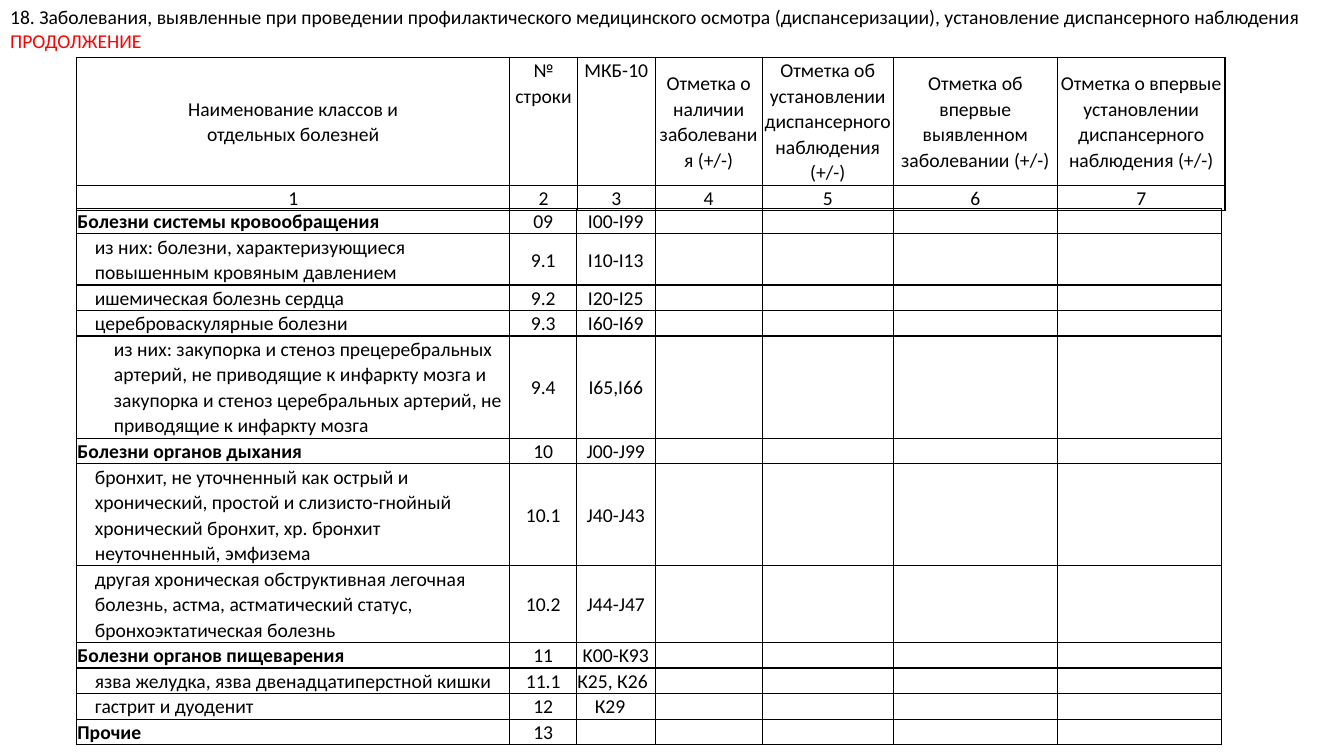
from lxml import etree
from pptx import Presentation
from pptx.dml.color import RGBColor
from pptx.enum.text import MSO_ANCHOR as Anchor, MSO_AUTO_SIZE as AutoSize, PP_ALIGN as Align
from pptx.oxml.ns import qn
from pptx.util import Cm, Pt

BLACK = "000000"
RED = "FF0000"
FONT_SIZE = 14
LINE_HEIGHT = 0.63
HEADER_HEIGHT = 3.17
TABLE_LEFT = 1.93
TITLE_HEIGHT = 1.45

HEADER_COLUMNS = [10.92, 1.7, 1.96, 2.7, 3.3, 4.14, 4.22]
DISEASE_COLUMNS = [10.92, 1.68, 1.98, 2.7, 3.3, 4.14, 4.14]

HEADINGS = [
    ("Наименование классов и\nотдельных болезней", Anchor.MIDDLE),
    ("№ строки", Anchor.TOP),
    ("МКБ-10", Anchor.TOP),
    ("Отметка о наличии заболевания (+/-)", Anchor.MIDDLE),
    ("Отметка об установлении диспансерного наблюдения (+/-)", Anchor.MIDDLE),
    ("Отметка об впервые выявленном заболевании (+/-)", Anchor.MIDDLE),
    ("Отметка о впервые установлении диспансерного наблюдения (+/-)", Anchor.MIDDLE),
]

CENTERED = {"align": Align.CENTER, "anchor": Anchor.MIDDLE}
LEFT = {"align": Align.LEFT}
CLASS = {"bold": True}
DISEASE = {"indent": 0.44}
SUBTYPE = {"indent": 0.92}

DISEASES = [
    ("Болезни системы кровообращения", CLASS, 1, "09", "I00-I99", CENTERED),
    ("из них: болезни, характеризующиеся повышенным кровяным давлением",
     DISEASE, 2, "9.1", "I10-I13", CENTERED),
    ("ишемическая болезнь сердца", DISEASE, 1, "9.2", "I20-I25", CENTERED),
    ("цереброваскулярные болезни", DISEASE, 1, "9.3", "I60-I69", CENTERED),
    ("из них: закупорка и стеноз прецеребральных артерий, не приводящие к инфаркту мозга "
     "и закупорка и стеноз церебральных артерий, не приводящие к инфаркту мозга",
     SUBTYPE, 4, "9.4", "I65,I66", CENTERED),
    ("Болезни органов дыхания", CLASS, 1, "10", "J00-J99", CENTERED),
    ("бронхит, не уточненный как острый и хронический, простой и слизисто-гнойный "
     "хронический бронхит, хр. бронхит неуточненный, эмфизема",
     DISEASE, 4, "10.1", "J40-J43", CENTERED),
    ("другая хроническая обструктивная легочная болезнь, астма, астматический статус, "
     "бронхоэктатическая болезнь", DISEASE, 3, "10.2", "J44-J47", CENTERED),
    ("Болезни органов пищеварения", CLASS, 1, "11", "K00-K93", CENTERED),
    ("язва желудка, язва двенадцатиперстной кишки", DISEASE, 1, "11.1", "К25, К26", LEFT),
    ("гастрит и дуоденит", DISEASE, 1, "12", "К29", DISEASE),
    ("Прочие", CLASS, 1, "13", "", CENTERED),
]


def color(value):
    return RGBColor.from_string(value)


def write(paragraph, text, fill=BLACK, bold=False, align=Align.LEFT, spacing=1.07, indent=0):
    paragraph.alignment = align
    paragraph.line_spacing = spacing
    if indent:
        paragraph._p.get_or_add_pPr().set("marL", str(Cm(indent)))
    if not text:
        etree.SubElement(paragraph._p, qn("a:endParaRPr"), sz=str(FONT_SIZE * 100))
        return
    run = paragraph.add_run()
    run.text = text
    run.font.name = "Calibri"
    run.font.size = Pt(FONT_SIZE)
    run.font.bold = bold
    run.font.color.rgb = color(fill)


def add_borders(cell):
    properties = cell._tc.get_or_add_tcPr()
    for position, side in enumerate(("lnL", "lnR", "lnT", "lnB")):
        line = etree.Element(qn(f"a:{side}"), w=str(Pt(1)))
        fill = etree.SubElement(line, qn("a:solidFill"))
        etree.SubElement(fill, qn("a:srgbClr"), val=BLACK)
        properties.insert(position, line)


def write_cell(cell, text, anchor=Anchor.TOP, **text_format):
    cell.margin_left = cell.margin_right = Cm(0.02)
    cell.margin_top = cell.margin_bottom = 0
    cell.vertical_anchor = anchor
    cell.fill.background()
    add_borders(cell)
    frame = cell.text_frame
    for index, line in enumerate(text.split("\n")):
        paragraph = frame.add_paragraph() if index else frame.paragraphs[0]
        write(paragraph, line, **text_format)


def add_grid(slide, left, top, columns, heights):
    table = slide.shapes.add_table(len(heights), len(columns), Cm(left), Cm(top),
                                   Cm(sum(columns)), Cm(sum(heights))).table
    table.first_row = table.horz_banding = False
    for column, width in zip(table.columns, columns):
        column.width = Cm(width)
    for row, height in zip(table.rows, heights):
        row.height = Cm(height)
    return table


def add_title(slide, left, top, width, height):
    title = slide.shapes.title
    title.left, title.top, title.width, title.height = Cm(left), Cm(top), Cm(width), Cm(height)
    frame = title.text_frame
    frame.word_wrap = True
    frame.auto_size = AutoSize.NONE
    frame.vertical_anchor = Anchor.TOP
    paragraph = frame.paragraphs[0]
    write(paragraph, "18. Заболевания, выявленные при проведении профилактического медицинского "
                     "осмотра (диспансеризации), установление диспансерного наблюдения ", spacing=1.0)
    write(paragraph, "ПРОДОЛЖЕНИЕ", fill=RED, spacing=1.0)


def add_header_table(slide, left, top):
    table = add_grid(slide, left, top, HEADER_COLUMNS, [HEADER_HEIGHT, LINE_HEIGHT])
    for index, (heading, anchor) in enumerate(HEADINGS):
        write_cell(table.cell(0, index), heading, anchor=anchor, align=Align.CENTER)
        write_cell(table.cell(1, index), str(index + 1), **CENTERED)


def add_disease_table(slide, left, top):
    heights = [disease[2] * LINE_HEIGHT for disease in DISEASES]
    table = add_grid(slide, left, top, DISEASE_COLUMNS, heights)
    for row, (name, name_format, _, number, code, code_format) in enumerate(DISEASES):
        write_cell(table.cell(row, 0), name, **name_format)
        write_cell(table.cell(row, 1), number, **CENTERED)
        write_cell(table.cell(row, 2), code, **code_format)
        for column in range(3, len(DISEASE_COLUMNS)):
            write_cell(table.cell(row, column), "")


def main():
    presentation = Presentation()
    presentation.slide_width, presentation.slide_height = Cm(33.87), Cm(19.05)
    slide = presentation.slides.add_slide(presentation.slide_layouts[5])
    add_title(slide, 0, 0, 33.87, TITLE_HEIGHT)
    add_header_table(slide, TABLE_LEFT, TITLE_HEIGHT)
    add_disease_table(slide, TABLE_LEFT, TITLE_HEIGHT + HEADER_HEIGHT + LINE_HEIGHT)
    presentation.save("out.pptx")


if __name__ == "__main__":
    main()
